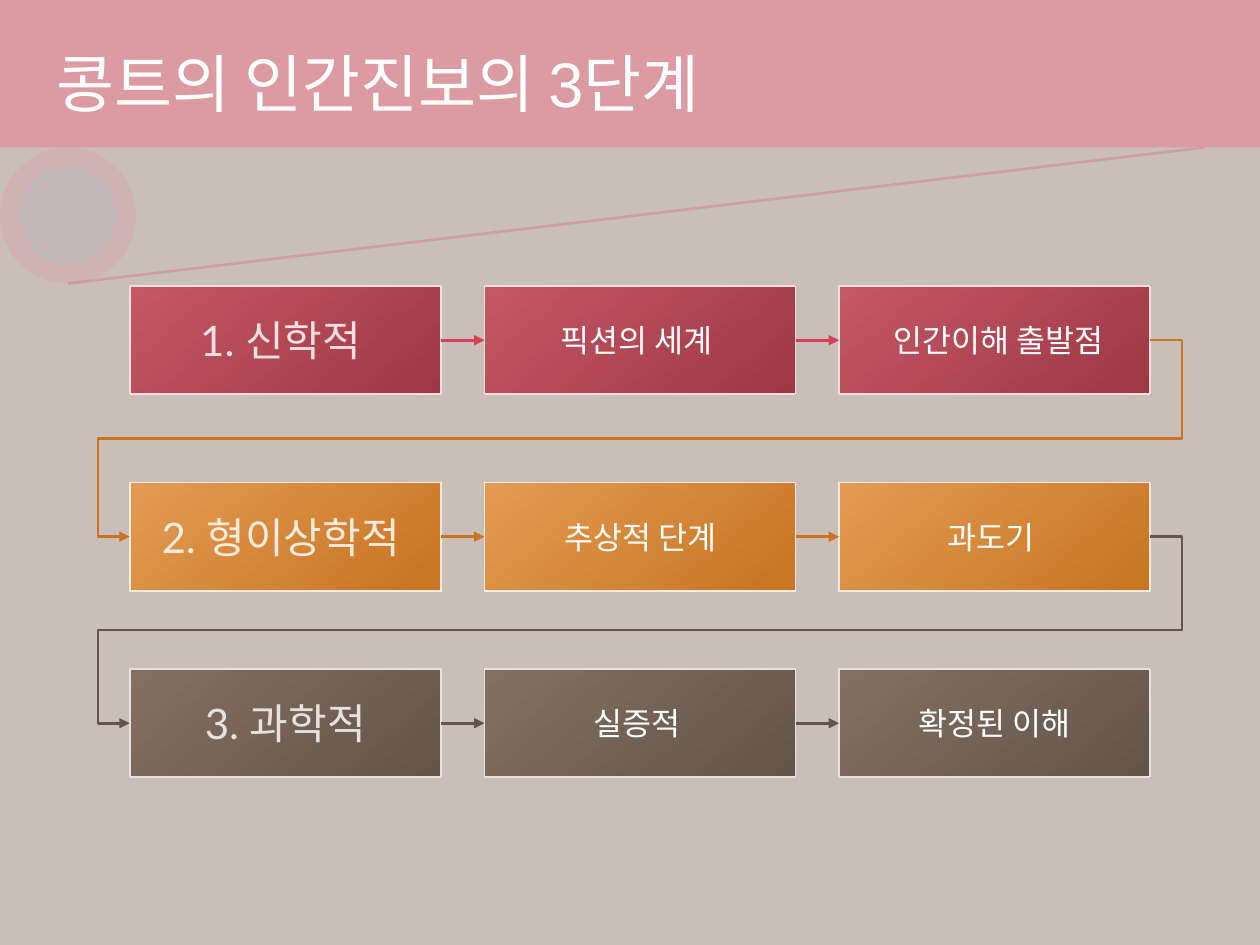
import dataclasses

import lxml.etree
import pptx
import pptx.dml.color
import pptx.enum.shapes
import pptx.enum.text
import pptx.oxml.ns
import pptx.util

qn = pptx.oxml.ns.qn
SHAPE = pptx.enum.shapes.MSO_SHAPE
CONNECTOR = pptx.enum.shapes.MSO_CONNECTOR
ALIGN = pptx.enum.text.PP_ALIGN
TOP, LEFT, BOTTOM, RIGHT = range(4)


@dataclasses.dataclass(frozen=True)
class RowStyle:
    light: str
    dark: str
    pale: str
    arrow: str


@dataclasses.dataclass(frozen=True)
class Theme:
    background: str = "C9BEB8"
    band: str = "DC9BA3"
    ring: str = "E88B9D"
    ring_core: str = "94C7CC"
    accent: str = "D83D5C"
    white: str = "FFFFFF"
    title_font: str = "Arial"
    body_font: str = "Lato"
    title_size: int = 36
    stage_size: int = 24
    detail_size: int = 18
    line_width: float = 1.5
    rows: tuple = (
        RowStyle("C45865", "9D3844", "F3DEE0", "D83D5C"),
        RowStyle("E39B53", "C87421", "F9EBDD", "C87421"),
        RowStyle("847062", "63544A", "E7E2DF", "63544A"),
    )


THEME = Theme()
WIDTH, HEIGHT = 10, 7.5
BAND_HEIGHT = 1.17
GRID_LEFT, GRID_RIGHT = 1.03, 9.13
BOX_WIDTH, BOX_HEIGHT = 2.47, 0.86
ROW_TOPS = (2.27, 3.83, 5.31)
COLUMNS = 3
COLUMN_STEP = (GRID_RIGHT - GRID_LEFT - BOX_WIDTH) / (COLUMNS - 1)
DETOUR = 0.25

STAGES = (
    ("1. 신학적 ", "픽션의 세계 ", " 인간이해 출발점"),
    ("2. 형이상학적 ", "추상적 단계", "과도기 "),
    ("3. 과학적", "실증적 ", "확정된 이해"),
)


def inches(*lengths):
    return [pptx.util.Inches(length) for length in lengths]


def rgb(color):
    return pptx.dml.color.RGBColor.from_string(color)


def set_alpha(sp, percent):
    for color in sp._element.spPr.iter(qn("a:srgbClr")):
        lxml.etree.SubElement(color, qn("a:alpha"), val=str(percent * 1000))


def write_text(sp, text, *, size, font, color, align=ALIGN.CENTER):
    tf = sp.text_frame
    tf.word_wrap = True
    tf.vertical_anchor = pptx.enum.text.MSO_ANCHOR.MIDDLE
    p = tf.paragraphs[0]
    p.alignment = align
    r = p.add_run()
    r.text = text
    r.font.size = pptx.util.Pt(size)
    r.font.name = font
    r.font.color.rgb = rgb(color)


def add_plain_shape(slide, kind, box, color):
    sp = slide.shapes.add_shape(kind, *inches(*box))
    sp.shadow.inherit = False
    sp.fill.solid()
    sp.fill.fore_color.rgb = rgb(color)
    sp.line.fill.background()
    return sp


def add_line(slide, start, end, color, kind=CONNECTOR.STRAIGHT):
    line = slide.shapes.add_connector(kind, *inches(*start, *end))
    line.line.color.rgb = rgb(color)
    line.line.width = pptx.util.Pt(THEME.line_width)
    lxml.etree.SubElement(line._element.spPr, qn("a:effectLst"))
    return line


def add_arrow(slide, source, target, color, kind=CONNECTOR.STRAIGHT):
    line = add_line(slide, (0, 0), (1, 1), color, kind)
    line.begin_connect(source, RIGHT)
    line.end_connect(target, LEFT)
    ln = line.line._get_or_add_ln()
    lxml.etree.SubElement(ln, qn("a:tailEnd"), type="triangle")
    return line


def add_return_arrow(slide, source, target, color):
    line = add_arrow(slide, source, target, color, CONNECTOR.ELBOW)
    geometry = line._element.spPr.find(qn("a:prstGeom"))
    geometry.set("prst", "bentConnector5")
    guides = geometry.find(qn("a:avLst"))
    overshoot = DETOUR / (GRID_RIGHT - GRID_LEFT)
    for number, share in enumerate((-overshoot, 0.5, 1 + overshoot), 1):
        lxml.etree.SubElement(guides, qn("a:gd"), name=f"adj{number}",
                              fmla=f"val {round(share * 100000)}")


def add_box(slide, row, column, text):
    style = THEME.rows[row]
    left = GRID_LEFT + column * COLUMN_STEP
    sp = add_plain_shape(slide, SHAPE.RECTANGLE,
                         (left, ROW_TOPS[row], BOX_WIDTH, BOX_HEIGHT), style.light)
    sp.fill.gradient()
    sp.fill.gradient_angle = 310
    for stop, color in zip(sp.fill.gradient_stops, (style.light, style.dark)):
        stop.color.rgb = rgb(color)
    sp.line.color.rgb = rgb(style.pale)
    sp.line.width = pptx.util.Pt(1)
    is_stage = column == 0
    write_text(sp, text, font=THEME.body_font,
               size=THEME.stage_size if is_stage else THEME.detail_size,
               color=style.pale if is_stage else THEME.white)
    return sp


def add_decoration(slide):
    diameter, inset = 1.08, 0.15
    core = diameter - 2 * inset
    for box, color in (
        ((0, BAND_HEIGHT, diameter, diameter), THEME.ring),
        ((inset, BAND_HEIGHT + inset, core, core), THEME.ring_core),
    ):
        set_alpha(add_plain_shape(slide, SHAPE.OVAL, box, color), 22)
    line = add_line(slide, (diameter / 2, BAND_HEIGHT + diameter),
                    (9.56, BAND_HEIGHT), THEME.accent)
    set_alpha(line, 23)


def add_title(slide, text):
    add_plain_shape(slide, SHAPE.RECTANGLE, (0, 0, WIDTH, BAND_HEIGHT), THEME.band)
    sp = slide.shapes.add_textbox(*inches(0.35, 0.14, 9.27, 1.03))
    write_text(sp, text, size=THEME.title_size, font=THEME.title_font,
               color=THEME.white, align=ALIGN.LEFT)


def add_stages(slide):
    previous = None
    for row, texts in enumerate(STAGES):
        color = THEME.rows[row].arrow
        boxes = [add_box(slide, row, column, text) for column, text in enumerate(texts)]
        if previous:
            add_return_arrow(slide, previous, boxes[0], color)
        for source, target in zip(boxes, boxes[1:]):
            add_arrow(slide, source, target, color)
        previous = boxes[-1]


def main():
    prs = pptx.Presentation()
    prs.slide_width, prs.slide_height = inches(WIDTH, HEIGHT)
    slide = prs.slides.add_slide(prs.slide_layouts[6])
    slide.background.fill.solid()
    slide.background.fill.fore_color.rgb = rgb(THEME.background)
    add_decoration(slide)
    add_title(slide, "콩트의 인간진보의 3단계")
    add_stages(slide)
    prs.save("out.pptx")


if __name__ == "__main__":
    main()
